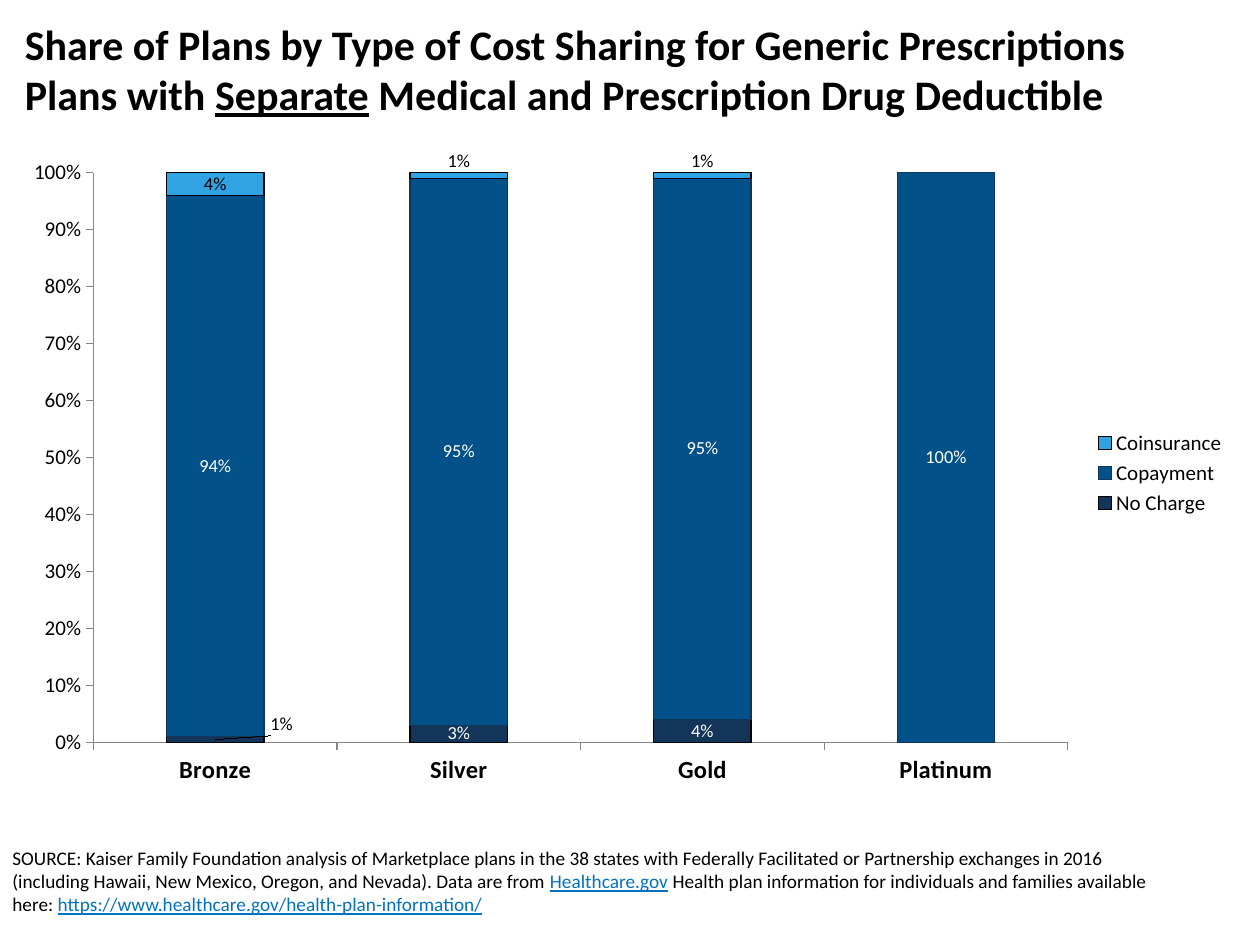
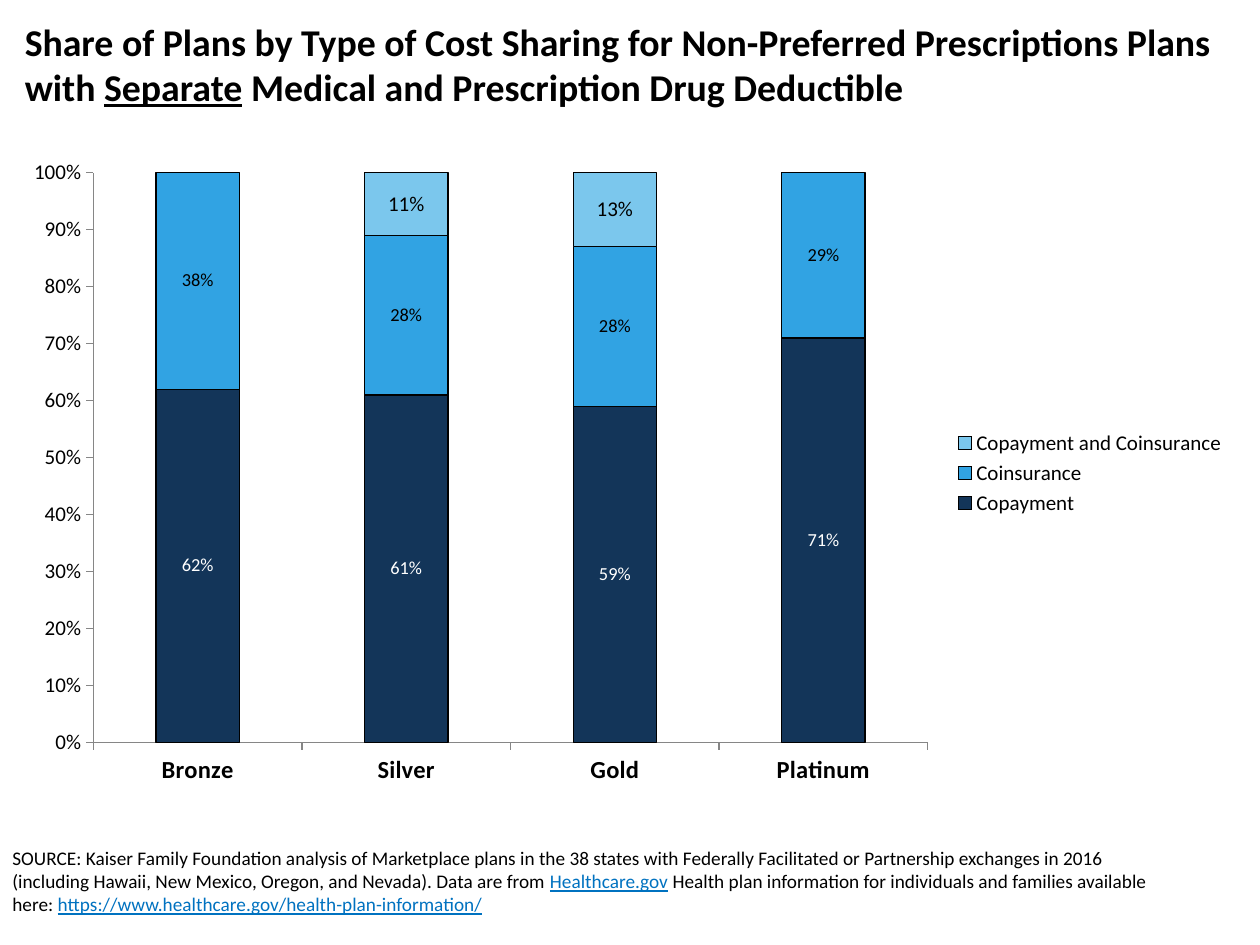
from lxml import etree
from pptx import Presentation
from pptx import util as u
from pptx.chart import data
from pptx.dml import color
from pptx.enum import chart as kinds
from pptx.enum import text
from pptx.oxml import ns

BLACK, WHITE, LINK, GREY = "000000", "FFFFFF", "0072C0", "868686"
NAVY, BLUE, SKY, PALE = "133559", "025189", "31A3E3", "7BC7ED"
METALS = ["Bronze", "Silver", "Gold", "Platinum"]
SOURCE = [
    ("SOURCE: Kaiser Family Foundation analysis of Marketplace plans in the 38 states with "
     "Federally Facilitated or Partnership exchanges in 2016 (including Hawaii, New Mexico, "
     "Oregon, and Nevada). Data are from ", {}),
    ("Healthcare.gov", {"underline": True, "color": LINK}),
    (" Health plan information for individuals and families available here: ", {}),
    ("https://www.healthcare.gov/health-plan-information/", {"underline": True, "color": LINK}),
]
SEPARATE = ("Separate", {"underline": True})
TITLE_END = (" Medical and Prescription Drug Deductible", {})


def rgb(code):
    return color.RGBColor.from_string(code)


def element(parent, tag, place=None, **attributes):
    node = etree.Element(ns.qn(tag), attributes)
    parent.insert(len(parent) if place is None else place, node)
    return node


def set_layout(parent, place, **values):
    layout = element(parent, "c:layout", place)
    manual = element(layout, "c:manualLayout")
    for name, value in values.items():
        element(manual, f"c:{name}", val=str(value))


def set_font(font, **values):
    font.color.rgb = rgb(values.pop("color", BLACK))
    for name, value in {"name": "Calibri", **values}.items():
        setattr(font, name, value)


class Builder:
    def __init__(self):
        self.deck = Presentation()
        self.deck.slide_width, self.deck.slide_height = u.Cm(25.4), u.Cm(19.05)
        self.page = None

    def add_page(self):
        self.page = self.deck.slides.add_slide(self.deck.slide_layouts[6])

    def add_text(self, area, lines, **style):
        box = self.page.shapes.add_textbox(*map(u.Cm, area))
        box.text_frame.word_wrap = True
        box.text_frame.vertical_anchor = text.MSO_ANCHOR.TOP
        para = box.text_frame.paragraphs[0]
        for number, line in enumerate(lines):
            if number:
                para.add_line_break()
            for words, extra in line:
                span = para.add_run()
                span.text = words
                set_font(span.font, **{**style, **extra})

    def add_title(self, width, size, lines):
        self.add_text((0.25, 0.25, width, 3.18), lines, size=u.Pt(size), bold=True)

    def add_source(self):
        self.add_text((0, 16.94, 23.5, 2.13), [SOURCE], size=u.Pt(11))

    def add_chart(self, plot_width, rows):
        table = data.CategoryChartData(number_format="0%")
        table.categories = METALS
        for row in rows:
            table.add_series(row["name"], row["values"])
        frame = self.page.shapes.add_chart(
            kinds.XL_CHART_TYPE.COLUMN_STACKED_100,
            *map(u.Cm, (0.2, 2.97, 24.77, 13.13)), table)
        chart = frame.chart
        set_font(chart.font, size=u.Pt(12))
        chart.has_title = False
        chart.has_legend = True
        chart.legend.position = kinds.XL_LEGEND_POSITION.RIGHT
        chart.legend.include_in_layout = False
        self.style_axes(chart)
        plot = chart.plots[0]
        for name, value in {"gap_width": 150, "overlap": 100, "vary_by_categories": False}.items():
            setattr(plot, name, value)
        for series, row in zip(plot.series, rows):
            self.style_series(series, row)
        area = chart._chartSpace.chart.plotArea
        for old in area.findall(ns.qn("c:layout")):
            area.remove(old)
        set_layout(area, 0, layoutTarget="inner", xMode="edge", yMode="edge",
                   x=0.068, y=0.039, w=plot_width, h=0.875)

    def style_axes(self, chart):
        for axis in (chart.category_axis, chart.value_axis):
            axis.has_major_gridlines = False
            axis.major_tick_mark = kinds.XL_TICK_MARK.OUTSIDE
            axis.minor_tick_mark = kinds.XL_TICK_MARK.NONE
            axis.format.line.color.rgb = rgb(GREY)
            axis.format.line.width = u.Pt(0.75)
        set_font(chart.category_axis.tick_labels.font, size=u.Pt(14), bold=True)
        scale = chart.value_axis
        scale.major_unit = 0.1
        set_font(scale.tick_labels.font, size=u.Pt(12))
        scale.tick_labels.number_format = "0%"
        scale.tick_labels.number_format_is_linked = False

    def style_series(self, series, row):
        series.format.fill.solid()
        series.format.fill.fore_color.rgb = rgb(row["fill"])
        series.format.line.color.rgb = rgb(row.get("line", BLACK))
        series.format.line.width = u.Pt(0.75)
        labels = series.data_labels
        style = {"size": u.Pt(row.get("size", 10.5)), "color": row.get("label", BLACK)}
        set_font(labels.font, **style)
        labels.show_value = True
        labels.number_format = "0%"
        labels.number_format_is_linked = False
        moved = row.get("moved", {})
        for index, value in enumerate(row["values"]):
            if value and index not in moved:
                continue
            set_font(series.points[index].data_label.font, **{**style, "color": BLACK})
            label = labels._element.xpath(f"c:dLbl[c:idx/@val='{index}']")[0]
            if value:
                x, y = moved[index]
                set_layout(label, 1, x=x, y=y)
                element(label, "c:numFmt", 2, formatCode="0%", sourceLinked="0")
            else:
                for part in label[1:]:
                    label.remove(part)
                element(label, "c:delete", val="1")


def main():
    builder = Builder()

    builder.add_page()
    builder.add_source()
    builder.add_title(22.86, 24, [
        [("Share of Plans by Type of Cost Sharing for Generic Prescriptions", {})],
        [("Plans with ", {}), SEPARATE, TITLE_END]])
    above = (0, -0.021)
    builder.add_chart(0.793, [
        {"name": "No Charge", "values": [0.01, 0.03, 0.04, 0], "fill": NAVY,
         "label": WHITE, "moved": {0: (0.054, -0.023)}},
        {"name": "Copayment", "values": [0.94, 0.95, 0.95, 1], "fill": BLUE,
         "line": NAVY, "label": WHITE},
        {"name": "Coinsurance", "values": [0.04, 0.01, 0.01, 0], "fill": SKY,
         "moved": {1: above, 2: above}}])

    builder.add_page()
    builder.add_source()
    builder.add_title(24.97, 21.6, [
        [("Share of Plans by Type of Cost Sharing for Non-Preferred Prescriptions Plans with ", {}),
         SEPARATE, TITLE_END]])
    builder.add_chart(0.679, [
        {"name": "Copayment", "values": [0.62, 0.61, 0.59, 0.71], "fill": NAVY, "label": WHITE},
        {"name": "Coinsurance", "values": [0.38, 0.28, 0.28, 0.29], "fill": SKY},
        {"name": "Copayment and Coinsurance", "values": [0, 0.11, 0.13, 0], "fill": PALE,
         "size": 12}])

    builder.deck.save("out.pptx")


if __name__ == "__main__":
    main()
